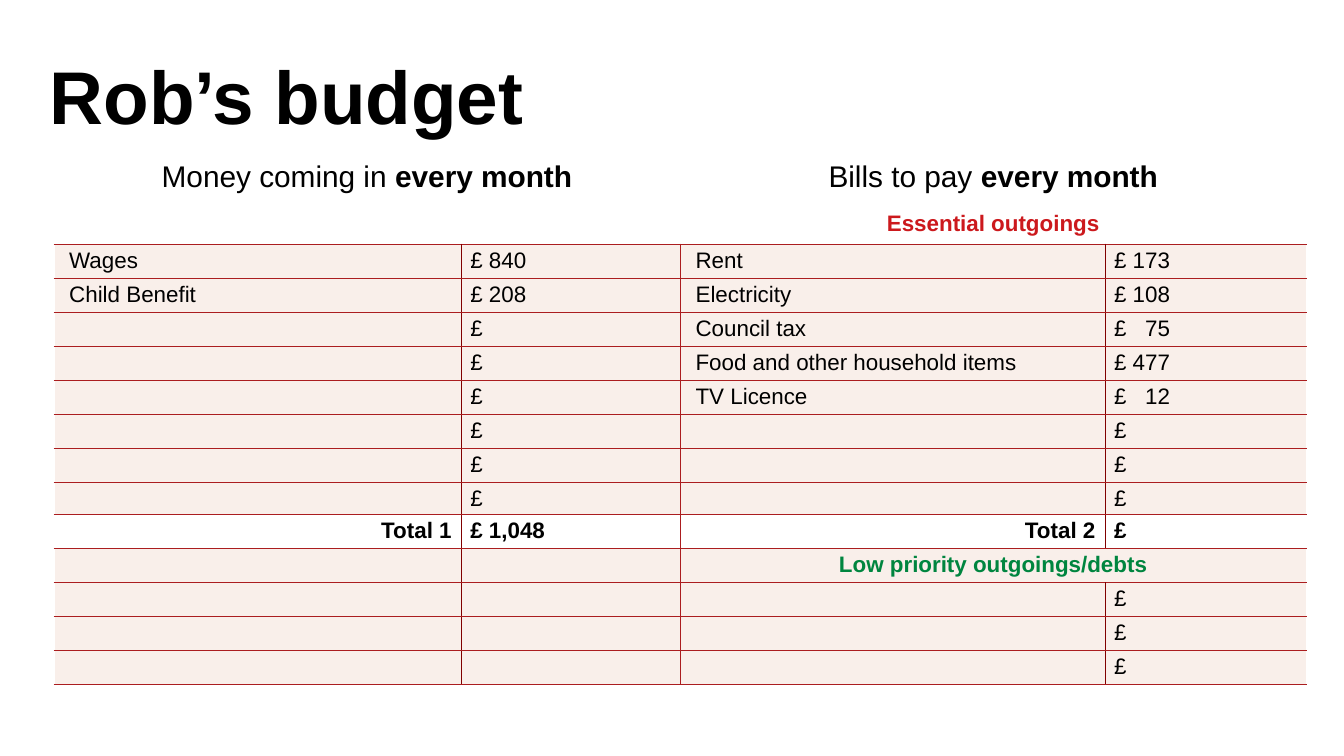
from dataclasses import dataclass

from lxml.etree import SubElement
from pptx import Presentation
from pptx.dml.color import RGBColor as RGB
from pptx.enum.text import MSO_ANCHOR as Anchor, MSO_AUTO_SIZE as AutoSize, PP_ALIGN as Align
from pptx.oxml.ns import qn
from pptx.util import Pt


@dataclass(frozen=True)
class Theme:
    font: str = "Arial"
    title_size: int = 40
    heading_size: int = 16
    body_size: int = 12
    ink: str = "000000"
    white: str = "FFFFFF"
    band: str = "F9EFEA"
    rule: str = "AB1D1F"
    divider: str = "800000"
    essential: str = "CC191D"
    low_priority: str = "00853F"


def apply(target, values):
    for name, value in values.items():
        setattr(target, name, value)


class BudgetSlide:
    def __init__(self, deck, theme):
        self.theme = theme
        self.slide = deck.slides.add_slide(deck.slide_layouts[5])

    def style(self, run, size, bold=False, color=None):
        apply(run.font, {"name": self.theme.font, "size": Pt(size), "bold": bold})
        run.font.color.rgb = RGB.from_string(color or self.theme.ink)

    def title(self, text, left, top, width, height):
        heading = self.slide.shapes.title
        apply(heading, {"left": Pt(left), "top": Pt(top), "width": Pt(width), "height": Pt(height)})
        frame = heading.text_frame
        apply(frame, {"text": text, "word_wrap": True, "auto_size": AutoSize.NONE,
                      "vertical_anchor": Anchor.TOP})
        line = frame.paragraphs[0]
        apply(line, {"alignment": Align.LEFT, "line_spacing": Pt(54)})
        self.style(line.runs[0], self.theme.title_size, bold=True)

    def table(self, left, top, columns, rows):
        grid = self.slide.shapes.add_table(len(rows), len(columns), Pt(left), Pt(top),
                                           Pt(sum(columns)), Pt(sum(rows))).table
        apply(grid, {"first_row": False, "horz_banding": False})
        for column, width in zip(grid.columns, columns):
            column.width = Pt(width)
        for row, height in zip(grid.rows, rows):
            row.height = Pt(height)
        return grid

    def cell(self, cell, parts=(), align=Align.LEFT, size=None, indent=0):
        """Write (text, bold, colour) parts into a table cell."""
        size = size or self.theme.body_size
        apply(cell, {"margin_left": Pt(5 + indent), "margin_right": Pt(5),
                     "margin_top": 0, "margin_bottom": 0})
        line = cell.text_frame.paragraphs[0]
        apply(line, {"alignment": align, "line_spacing": 1.15})
        for text, bold, color in parts:
            run = line.add_run()
            run.text = text
            self.style(run, size, bold, color)
        if not parts:
            SubElement(line._p, qn("a:endParaRPr"), sz=str(size * 100))
        return line

    def amount(self, cell, text, bold=False):
        line = self.cell(cell, [(text, bold, None)])
        if "\t" in text:  # line shorter figures up on the right
            stops = SubElement(line._p.get_or_add_pPr(), qn("a:tabLst"))
            SubElement(stops, qn("a:tab"), pos=str(Pt(30)), algn="r")

    def borders(self, cell, edges):
        props = cell._tc.get_or_add_tcPr()
        for side, (color, width) in edges.items():
            line = SubElement(props, qn(f"a:ln{side}"), w=str(Pt(width)))
            SubElement(SubElement(line, qn("a:solidFill")), qn("a:srgbClr"), val=color)

    def finish(self, cell, edges, fill):
        self.borders(cell, edges)
        if fill:
            cell.fill.solid()
            cell.fill.fore_color.rgb = RGB.from_string(fill)
        else:
            cell.fill.background()


INCOME = [("Wages", "£ 840"), ("Child Benefit", "£ 208")]
BILLS = [("Rent", "£ 173"), ("Electricity", "£ 108"), ("Council tax", "£\t75"),
         ("Food and other household items", "£ 477"), ("TV Licence", "£\t12")]
ENTRY_ROWS = range(2, 10)
TOTAL_ROW, LOW_ROW, LAST_ROW = 10, 11, 14


def main():
    theme = Theme()
    deck = Presentation()
    apply(deck, {"slide_width": Pt(720), "slide_height": Pt(405)})
    page = BudgetSlide(deck, theme)
    page.title("Rob’s budget", 19.4, 17.3, 516.2, 58.3)

    # Budget grid
    row_heights = [27.6, 19.8] + [18.2] * 7 + [17.4] + [18.2] * 5
    grid = page.table(28.8, 83.5, [218.2, 117.4, 227.5, 108], row_heights)
    for row, column in [(0, 0), (0, 2), (1, 2), (LOW_ROW, 2)]:
        grid.cell(row, column).merge(grid.cell(row, column + 1))

    # Headings
    for column, lead in [(0, "Money coming in "), (2, "Bills to pay ")]:
        page.cell(grid.cell(0, column), [(lead, False, None), ("every month", True, None)],
                  Align.CENTER, theme.heading_size)
    for row, label, color in [(1, "Essential outgoings", theme.essential),
                              (LOW_ROW, "Low priority outgoings/debts", theme.low_priority)]:
        page.cell(grid.cell(row, 2), [(label, True, color)], Align.CENTER)

    # Entries, with blank lines left to fill in
    for column, entries in [(0, INCOME), (2, BILLS)]:
        blanks = [("", "£")] * (len(ENTRY_ROWS) - len(entries))
        for row, (label, sum_due) in zip(ENTRY_ROWS, entries + blanks):
            parts = [(label, False, None)] if label else []
            page.cell(grid.cell(row, column), parts, indent=3.3)
            page.amount(grid.cell(row, column + 1), sum_due)

    # Totals and low priority lines
    for column, label, total in [(0, "Total 1", "£ 1,048"), (2, "Total 2", "£")]:
        page.cell(grid.cell(TOTAL_ROW, column), [(label, True, None)], Align.RIGHT)
        page.amount(grid.cell(TOTAL_ROW, column + 1), total, bold=True)
    for row in range(LOW_ROW + 1, LAST_ROW + 1):
        page.amount(grid.cell(row, 3), "£")
    for row in [1, *range(LOW_ROW, LAST_ROW + 1)]:
        for column in range(4):
            if not grid.cell(row, column).text_frame.text:
                page.cell(grid.cell(row, column))

    # Borders and fills
    outer, divider = (theme.white, 0.25), (theme.divider, 0.25)
    body_edges = [outer, divider, (theme.rule, 0.75), divider, outer]
    head_edges = [outer] + [(theme.white, 0.75)] * 3 + [outer]
    levels = [outer, (theme.white, 0.75), (theme.rule, 0.75)]
    levels += [(theme.rule, 0.25)] * (len(row_heights) - 2)
    for row in range(len(row_heights)):
        uprights = head_edges if row < 2 else body_edges
        fill = None if row == 0 else theme.white if row in (1, TOTAL_ROW) else theme.band
        for column in range(4):
            cell = grid.cell(row, column)
            span = cell.span_width if cell.is_merge_origin else 1
            edges = {"L": uprights[column], "R": uprights[column + span],
                     "T": levels[row], "B": levels[row + 1]}
            if cell.is_spanned:
                del edges["L"]
            page.finish(cell, edges, fill)

    deck.save("out.pptx")


if __name__ == "__main__":
    main()
